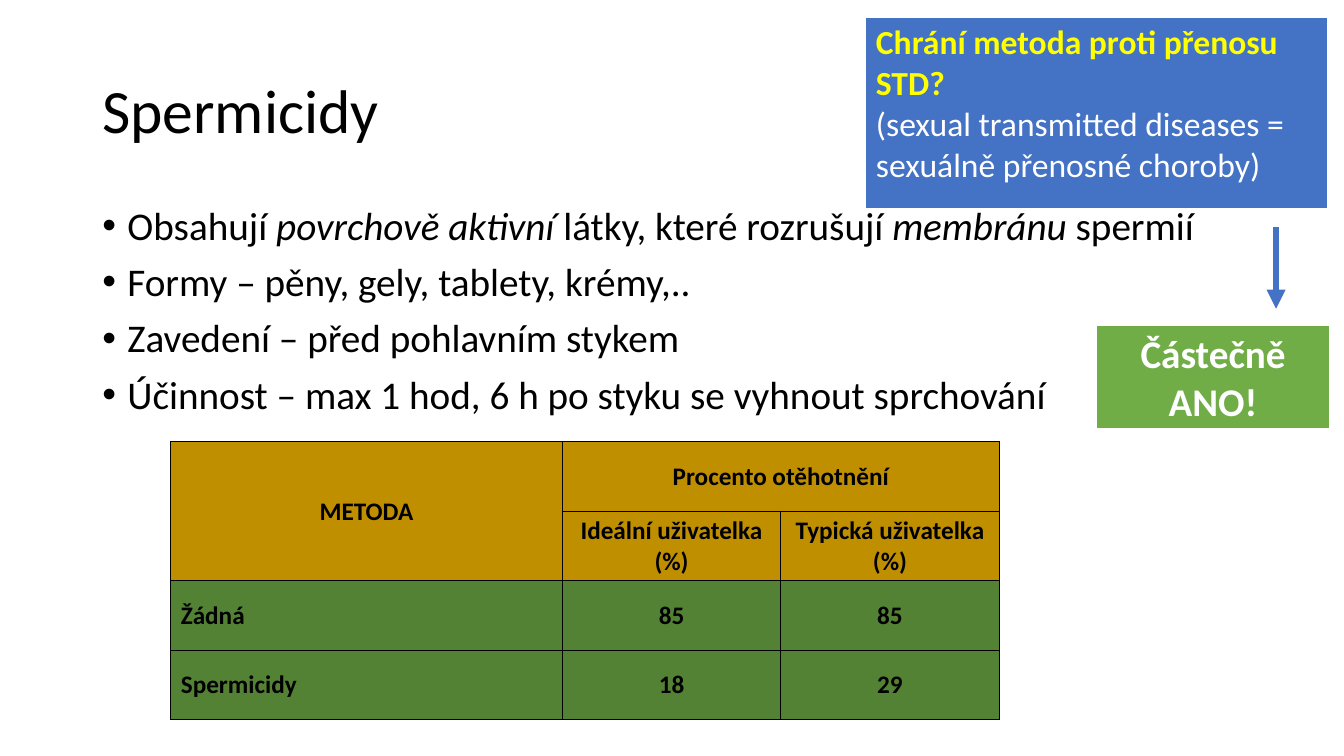
from lxml.etree import SubElement
from pptx import Presentation
from pptx.dml.color import RGBColor
from pptx.enum.shapes import MSO_CONNECTOR as CONNECTOR
from pptx.enum.text import MSO_ANCHOR as ANCHOR, PP_ALIGN as ALIGN
from pptx.oxml import parse_xml
from pptx.oxml.ns import nsdecls, qn
from pptx.util import Pt

BLACK, WHITE, YELLOW = "000000", "FFFFFF", "FFFF00"
BLUE, GREEN, GOLD, DARK_GREEN = "4472C4", "70AD47", "BF8F00", "548235"


def add_span(para, text, size, color=BLACK, bold=False, italic=False):
    span = para.add_run()
    span.text = text
    font = span.font
    font.name, font.size, font.bold, font.italic = "Calibri", Pt(size), bold, italic
    font.color.rgb = RGBColor.from_string(color)


def style_cell(cell, fill, line_color, widths):
    """Fill a cell and draw its left, right, top and bottom borders."""
    cell.fill.solid()
    cell.fill.fore_color.rgb = RGBColor.from_string(fill)
    props = cell._tc.get_or_add_tcPr()
    for place, (side, width) in enumerate(zip("LRTB", widths)):
        props.insert(place, parse_xml(
            f'<a:ln{side} {nsdecls("a")} w="{Pt(width)}"><a:solidFill>'
            f'<a:srgbClr val="{line_color}"/></a:solidFill></a:ln{side}>'))


deck = Presentation()
deck.slide_width, deck.slide_height = Pt(960), Pt(540)
page = deck.slides.add_slide(deck.slide_layouts[6])

# Title
box = page.shapes.add_textbox(Pt(66), Pt(28.75), Pt(828), Pt(104.4))
box.text_frame.word_wrap = True
box.text_frame.vertical_anchor = ANCHOR.MIDDLE
para = box.text_frame.paragraphs[0]
para.line_spacing = 0.9
add_span(para, "Spermicidy", 44)

# Bullets: (text, italic) runs
bullets = [
    [("Obsahují ", False), ("povrchově aktivní ", True),
     ("látky, které rozrušují ", False), ("membránu", True), (" spermií", False)],
    [("Formy – pěny, gely, tablety, krémy,..", False)],
    [("Zavedení – před pohlavním stykem", False)],
    [("Účinnost – max 1 hod, 6 h po styku se vyhnout sprchování", False)],
]
box = page.shapes.add_textbox(Pt(66), Pt(143.75), Pt(828), Pt(342.6))
frame = box.text_frame
frame.word_wrap = True
for index, runs in enumerate(bullets):
    para = frame.add_paragraph() if index else frame.paragraphs[0]
    para.line_spacing = 0.9
    para.space_before = Pt(10 if index else 0)
    props = para._p.get_or_add_pPr()
    props.set("marL", str(Pt(18)))
    props.set("indent", str(-Pt(18)))
    SubElement(props, qn("a:buFont")).set("typeface", "Arial")
    SubElement(props, qn("a:buChar")).set("char", "•")
    for text, italic in runs:
        add_span(para, text, 28, italic=italic)

# Question and answer panels, each a table of one cell
panels = [
    ((618.5, 12.5, 329.5, 137.5), BLUE, 24, ALIGN.LEFT,
     [("Chrání metoda proti přenosu", YELLOW, True), ("STD?", YELLOW, True),
      ("(sexual transmitted diseases = sexuálně přenosné choroby)", WHITE, False)]),
    ((783.5, 232.75, 166, 74), GREEN, 28, ALIGN.CENTER,
     [("Částečně ANO!", WHITE, True)]),
]
for bounds, fill, size, align, lines in panels:
    table = page.shapes.add_table(1, 1, *map(Pt, bounds)).table
    cell = table.cell(0, 0)
    style_cell(cell, fill, WHITE, (1, 1, 1, 3))
    for index, (text, color, bold) in enumerate(lines):
        frame = cell.text_frame
        para = frame.add_paragraph() if index else frame.paragraphs[0]
        para.alignment = align
        add_span(para, text, size, color, bold)

# Pregnancy rates
rates = [
    ["METODA", "Procento otěhotnění", ""],
    ["", "Ideální uživatelka (%)", "Typická uživatelka (%)"],
    ["Žádná", "85", "85"],
    ["Spermicidy", "18", "29"],
]
table = page.shapes.add_table(4, 3, Pt(121.75), Pt(315.25), Pt(592), Pt(198.8)).table
for column, width in zip(table.columns, (280, 156, 156)):
    column.width = Pt(width)
for r, row in enumerate(rates):
    table.rows[r].height = Pt(49.7)
    for c, text in enumerate(row):
        cell = table.cell(r, c)
        is_name = r > 1 and c == 0
        style_cell(cell, GOLD if r < 2 else DARK_GREEN, BLACK, [0.5] * 4)
        cell.vertical_anchor = ANCHOR.MIDDLE
        cell.margin_left = Pt(7.5 if is_name else 0.75)
        cell.margin_right = cell.margin_top = Pt(0.75)
        cell.margin_bottom = Pt(0)
        if text:
            para = cell.text_frame.paragraphs[0]
            para.alignment = ALIGN.LEFT if is_name else ALIGN.CENTER
            add_span(para, text, 18, bold=True)
table.cell(0, 0).merge(table.cell(1, 0))
table.cell(0, 1).merge(table.cell(0, 2))

# Arrow from question to answer
arrow = page.shapes.add_connector(
    CONNECTOR.STRAIGHT, Pt(911.5), Pt(162), Pt(911.5), Pt(220.5))
arrow.line.width = Pt(4.5)
arrow.line.color.rgb = RGBColor.from_string(BLUE)
SubElement(arrow.line._get_or_add_ln(), qn("a:tailEnd")).set("type", "triangle")
SubElement(arrow._element.spPr, qn("a:effectLst"))

deck.save("out.pptx")
